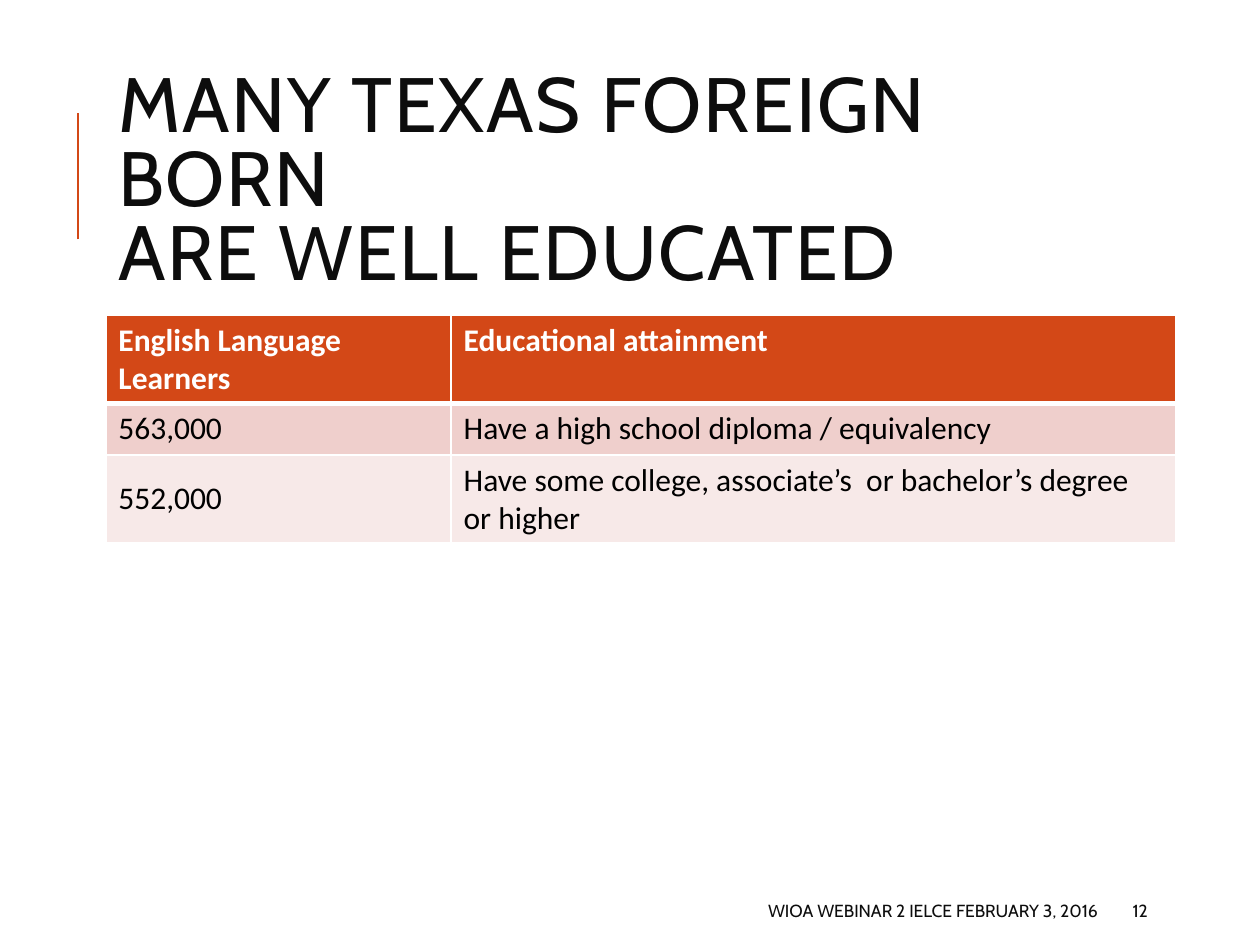
from pptx import Presentation
from pptx.dml.color import RGBColor
from pptx.enum.shapes import MSO_CONNECTOR as Conn
from pptx.enum.text import MSO_ANCHOR as Anchor, PP_ALIGN as Align
from pptx.oxml.ns import qn
from pptx.util import Inches, Pt
from lxml.etree import SubElement

RUST = RGBColor(0xD3, 0x48, 0x17)
ROSE = RGBColor(0xEF, 0xCF, 0xCC)
PALE = RGBColor(0xF7, 0xE9, 0xE8)
INK = RGBColor(0x0D, 0x0D, 0x0D)
BLACK = RGBColor(0, 0, 0)
WHITE = RGBColor(0xFF, 0xFF, 0xFF)


def add_text(slide, text, left, top, width, height, size, align=Align.LEFT):
    box = slide.shapes.add_textbox(
        Inches(left), Inches(top), Inches(width), Inches(height))
    frame = box.text_frame
    frame.word_wrap = True
    frame.vertical_anchor = Anchor.MIDDLE
    para = frame.paragraphs[0]
    para.text = text
    para.alignment = align
    para.font.name = "Cabin"
    para.font.size = Pt(size)
    para.font.color.rgb = INK
    return para


def add_edge(cell, side, width):
    line = SubElement(cell._tc.get_or_add_tcPr(), qn("a:" + side), w=str(Pt(width)))
    fill = SubElement(line, qn("a:solidFill"))
    SubElement(fill, qn("a:srgbClr"), val=str(WHITE))


deck = Presentation()
deck.slide_width, deck.slide_height = Inches(10), Inches(7.5)
slide = deck.slides.add_slide(deck.slide_layouts[6])

# Accent line beside the title
rule = slide.shapes.add_connector(
    Conn.STRAIGHT, Inches(0.62), Inches(1.9), Inches(0.62), Inches(0.9))
rule.line.color.rgb = RUST
rule.line.width = Pt(1.5)
SubElement(rule._element.spPr, qn("a:effectLst"))

# Title, with letters spaced by one point
title = add_text(slide, "MANY TEXAS FOREIGN BORN \vARE WELL EDUCATED",
                 0.84, 0.64, 7.97, 1.64, 44)
title.line_spacing = 0.8
for run in title.runs:
    run.font._element.set("spc", "100")

# Table of learners by schooling
rows = [
    ("English Language Learners", "Educational attainment"),
    ("563,000", "Have a high school diploma / equivalency"),
    ("552,000", "Have some college, associate’s  or bachelor’s degree or higher"),
]
fills = [RUST, ROSE, PALE]
highs = [0.7, 0.41, 0.7]
table = slide.shapes.add_table(
    3, 2, Inches(0.84), Inches(2.5), Inches(8.49), Inches(sum(highs))).table
for col, wide in zip(table.columns, [2.74, 5.75]):
    col.width = Inches(wide)
for i, row in enumerate(rows):
    table.rows[i].height = Inches(highs[i])
    head = i == 0
    for j, text in enumerate(row):
        cell = table.cell(i, j)
        cell.text = text
        cell.vertical_anchor = Anchor.TOP if head else Anchor.MIDDLE
        font = cell.text_frame.paragraphs[0].font
        font.name = "Calibri"
        font.size = Pt(18)
        font.bold = head
        font.color.rgb = WHITE if head else BLACK
        # Edges come before the fill in the cell's XML
        for side in ("lnL", "lnR", "lnT", "lnB"):
            thick = (head and side == "lnB") or (i == 1 and side == "lnT")
            add_edge(cell, side, 3 if thick else 1)
        cell.fill.solid()
        cell.fill.fore_color.rgb = fills[i]

# Footer and page number
add_text(slide, "WIOA WEBINAR 2 IELCE FEBRUARY 3, 2016",
         3.97, 7.08, 4.84, 0.3, 10, Align.RIGHT)
add_text(slide, "12", 8.89, 7.08, 0.8, 0.3, 10)

deck.save("out.pptx")
